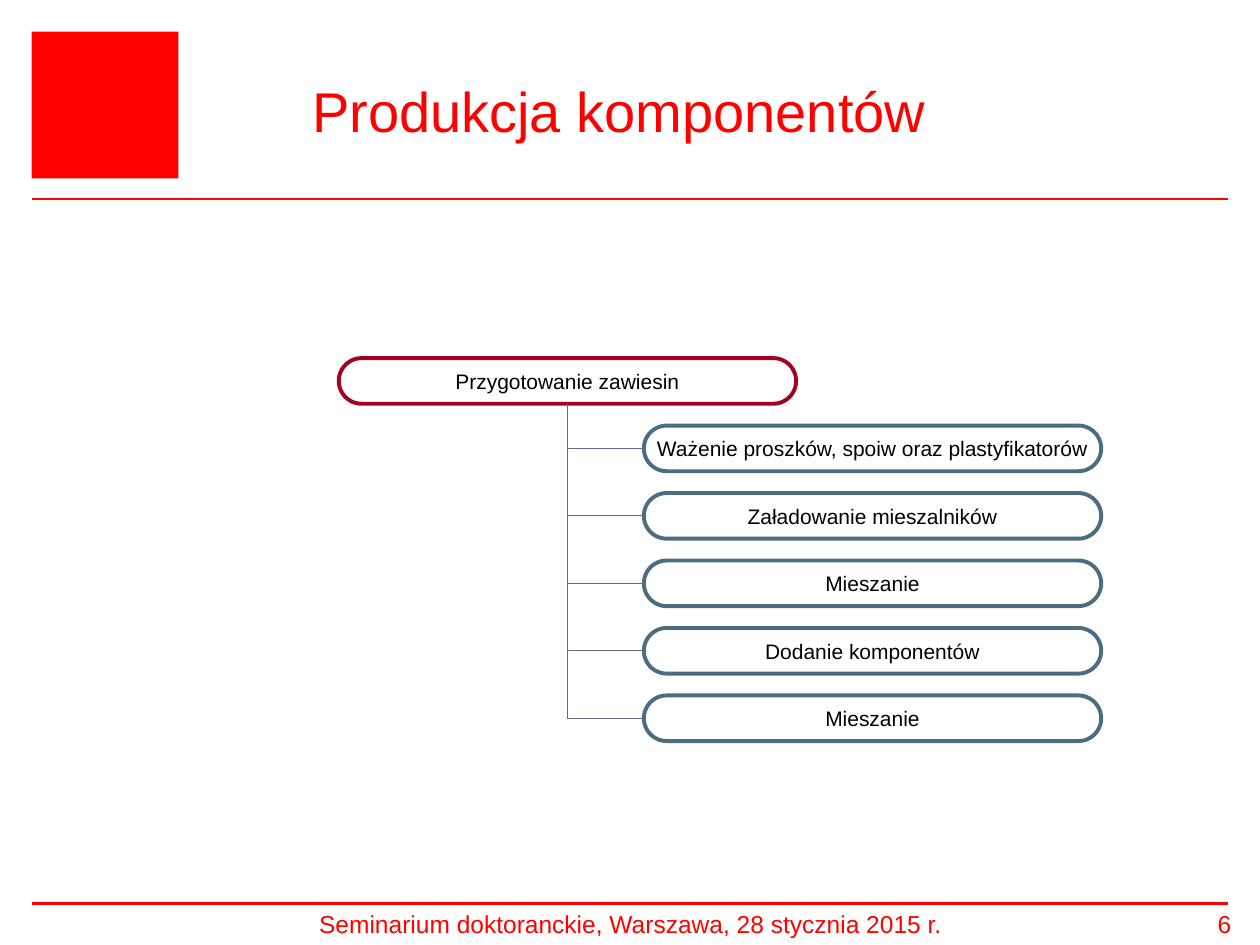
"""Build the slide on component production with its process hierarchy."""
from lxml.etree import SubElement
from pptx import Presentation
from pptx.dml.color import RGBColor
from pptx.enum.shapes import MSO_CONNECTOR as Link, MSO_SHAPE as Preset
from pptx.enum.text import MSO_ANCHOR as Anchor, PP_ALIGN as Align
from pptx.oxml.ns import qn
from pptx.util import Cm, Pt

COLORS = {
    "brand": "FF0000",
    "stage": "A50021",
    "step": "4C6D80",
    "branch": "666699",
    "text": "000000",
}
STAGE = "Przygotowanie zawiesin"
STEPS = [
    "Ważenie proszków, spoiw oraz plastyfikatorów",
    "Załadowanie mieszalników",
    "Mieszanie",
    "Dodanie komponentów",
    "Mieszanie",
]
FIRST_ROW, ROW_PITCH = 7.22, 1.36
STAGE_LEFT, STEP_LEFT = 6.83, 12.98
PILL_WIDTH, PILL_HEIGHT = 9.22, 0.92


def color(name):
    """Return the named colour."""
    return RGBColor.from_string(COLORS[name])


def write(frame, text, size, ink, align=Align.CENTER):
    """Put one formatted line of text in a frame."""
    frame.word_wrap = True
    frame.text = text
    line = frame.paragraphs[0]
    line.alignment = align
    font = line.runs[0].font
    font.name, font.size = "Arial", Pt(size)
    font.color.rgb = color(ink)


def style_link(link, ink, width):
    """Give a connector its line and remove its shadow."""
    link.line.color.rgb = color(ink)
    link.line.width = Pt(width)
    SubElement(link._element.spPr, qn("a:effectLst"))


def add_rule(slide, top):
    """Draw a horizontal rule across the slide."""
    rule = slide.shapes.add_connector(
        Link.STRAIGHT, Cm(0.64), Cm(top), Cm(24.76), Cm(top))
    style_link(rule, "brand", 1.5)


def add_emblem(slide):
    """Place the plain red square in the corner."""
    emblem = slide.shapes.add_shape(
        Preset.RECTANGLE, Cm(0.64), Cm(0.64), Cm(2.96), Cm(2.96))
    emblem.shadow.inherit = False
    emblem.fill.solid()
    emblem.fill.fore_color.rgb = color("brand")
    emblem.line.fill.background()


def add_title(slide, text):
    """Position and format the title placeholder."""
    title = slide.shapes.title
    title.left, title.top = Cm(4.29), Cm(0.64)
    title.width, title.height = Cm(16.38), Cm(3.18)
    title.text_frame.vertical_anchor = Anchor.MIDDLE
    write(title.text_frame, text, 32, "brand")


def add_footer(slide, left, width, text, align):
    """Add a text to the footer line."""
    footer = slide.shapes.add_textbox(Cm(left), Cm(18.21), Cm(width), Cm(0.85))
    write(footer.text_frame, text, 14, "brand", align)


def add_pill(slide, left, row, text, outline):
    """Add an outlined pill in the given row of the hierarchy."""
    pill = slide.shapes.add_shape(
        Preset.ROUNDED_RECTANGLE, Cm(left), Cm(FIRST_ROW + row * ROW_PITCH),
        Cm(PILL_WIDTH), Cm(PILL_HEIGHT))
    pill.adjustments[0] = 0.5
    pill.shadow.inherit = False
    pill.fill.background()
    pill.line.color.rgb = color(outline)
    pill.line.width = Pt(2.25)
    frame = pill.text_frame
    frame.margin_left = frame.margin_right = 0
    frame.margin_top = frame.margin_bottom = 0
    frame.vertical_anchor = Anchor.MIDDLE
    write(frame, text, 12, "text")
    return pill


def add_branch(slide, step, stage):
    """Join a step's left side to the bottom of its stage."""
    branch = slide.shapes.add_connector(
        Link.ELBOW, step.left, step.top + step.height // 2,
        stage.left + stage.width // 2, stage.top + stage.height)
    branch.begin_connect(step, 1)
    branch.end_connect(stage, 2)
    branch._element.spPr.find(qn("a:prstGeom")).set("prst", "bentConnector2")
    style_link(branch, "branch", 0.75)


def main():
    """Build and save the slide."""
    deck = Presentation()
    deck.slide_width, deck.slide_height = Cm(25.4), Cm(19.05)
    slide = deck.slides.add_slide(deck.slide_layouts[5])

    for top in (4.01, 18.21):
        add_rule(slide, top)
    add_emblem(slide)
    add_title(slide, "Produkcja komponentów")
    add_footer(slide, 3.23, 18.97,
               "Seminarium doktoranckie, Warszawa, 28 stycznia 2015 r.",
               Align.CENTER)
    add_footer(slide, 23.93, 1.14, "6", Align.RIGHT)

    stage = add_pill(slide, STAGE_LEFT, 0, STAGE, "stage")
    for row, text in enumerate(STEPS, start=1):
        step = add_pill(slide, STEP_LEFT, row, text, "step")
        add_branch(slide, step, stage)

    deck.save("out.pptx")


if __name__ == "__main__":
    main()
